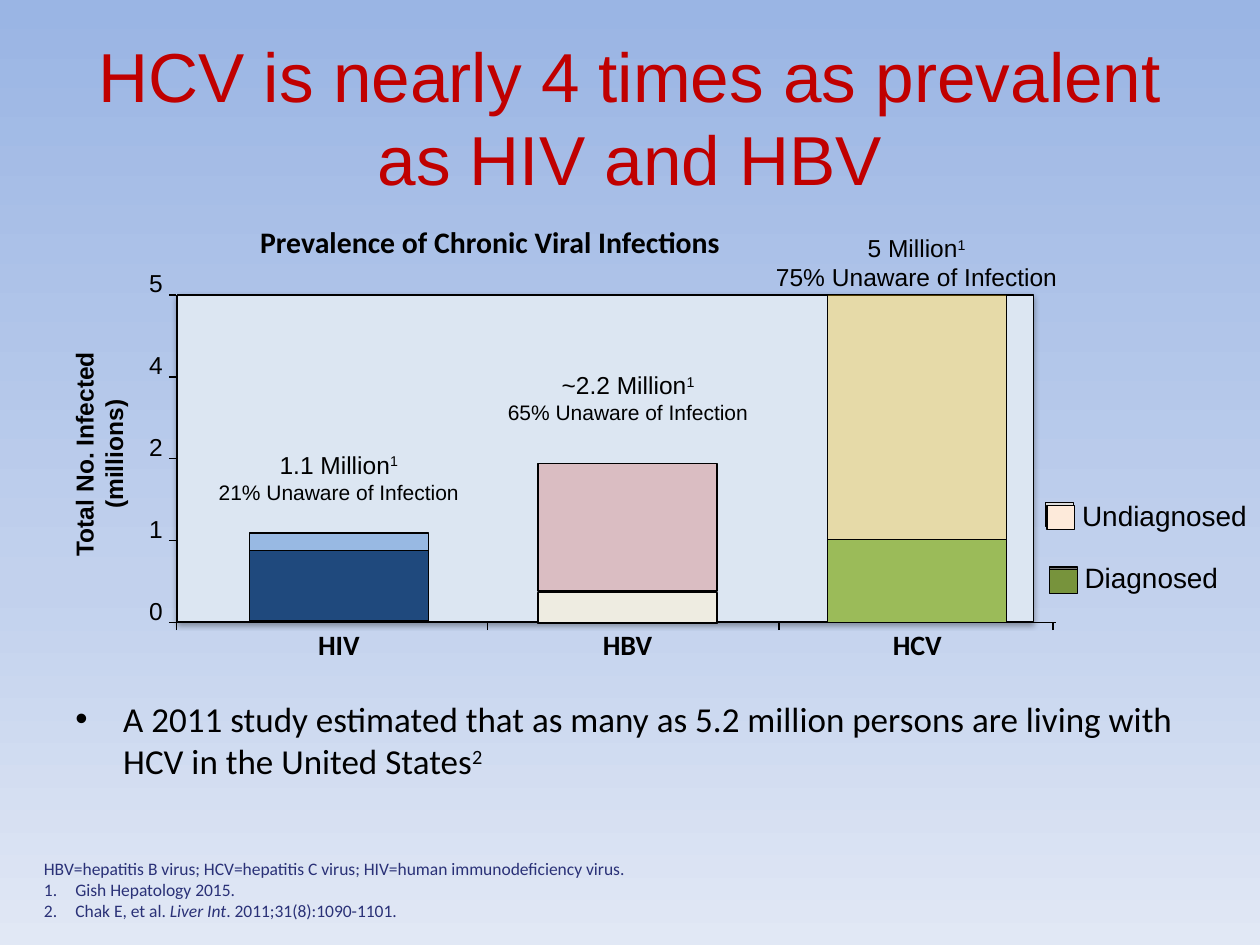
from lxml.etree import SubElement
from pptx import Presentation
from pptx.dml.color import RGBColor
from pptx.enum.shapes import MSO_CONNECTOR, MSO_SHAPE
from pptx.enum.text import MSO_ANCHOR, MSO_AUTO_SIZE, PP_ALIGN
from pptx.oxml import parse_xml
from pptx.oxml.ns import nsdecls, qn
from pptx.util import Inches, Pt

THEME = {
    "head": "Arial", "body": "Calibri",
    "ink": "000000", "title": "C00000", "note": "2A3177", "panel": "DCE6F2",
    "bg": [(0, "9AB5E4"), (62, "C2D1ED"), (100, "E1E8F5")],
    "title_pt": 39.6, "bullet_pt": 20, "chart_pt": 17, "label_pt": 16,
    "value_pt": 14, "detail_pt": 12, "note_pt": 10,
    "edge": 0.75, "axis": 1,
}
SUP = {"base": 30}
TITLE = "HCV is nearly 4 times as prevalent as HIV and HBV"
CHART_TITLE = "Prevalence of Chronic Viral Infections"
AXIS_TITLE = "Total No. Infected (millions)"
TICKS = ["5", "4", "2", "1", "0"]
BULLET = [("A 2011 study estimated that as many as 5.2 million persons are living with "
           "HCV in the United States", {}), ("2", SUP)]
NOTES = [
    [("HBV=hepatitis B virus; HCV=hepatitis C virus; HIV=human immunodeficiency virus.", {})],
    [("Gish Hepatology 2015.", {})],
    [("Chak E, et al. ", {}), ("Liver Int", {"italic": True}), (". 2011;31(8):1090-1101.", {})],
]
BARS = [
    ("HIV", 1.98, [(4.23, 0.15, "558ED5", 50), (4.37, 0.56, "1F497D", 100)]),
    ("HBV", 4.27, [(4.7, 0.25, "EEECE1", 100), (3.68, 1.01, "D99694", 50)]),
    ("HCV", 6.57, [(4.28, 0.66, "9BBB59", 100), (2.34, 1.94, "FFC000", 30)]),
]
VALUES = [
    ("5 Million", "75% Unaware of Infection", (5.37, 1.8, 3.81, 0.57), "value_pt"),
    ("1.1 Million", "21% Unaware of Infection", (1.46, 3.52, 2.46, 0.54), "detail_pt"),
    ("~2.2 Million", "65% Unaware of Infection", (3.57, 2.89, 2.83, 0.54), "detail_pt"),
]
LEGEND = [
    ("Diagnosed", (8.51, 4.4, 1.26, 0.37), [(8.33, 4.5, "777777"), (8.33, 4.52, "77933C")]),
    ("Undiagnosed", (8.49, 3.91, 1.54, 0.37), [(8.3, 3.99, "DDDDDD"), (8.31, 4.01, "FDEADA")]),
]
LEFT, TOP, BASE, RIGHT = 1.4, 2.34, 4.94, 8.38
BAR_W, TICK = 1.42, 0.06
CATEGORY_TICKS = [LEFT, 3.87, 6.18, 8.36]


def rgb(color):
    return RGBColor.from_string(color)


def add_text(s, text, at, size, font="head", color="ink", bold=False, align=PP_ALIGN.LEFT,
             anchor=MSO_ANCHOR.TOP, rotation=0, tight=False, bullets=None, indent=0.25):
    sp = s.shapes.add_textbox(*map(Inches, at))
    sp.rotation = rotation
    tf = sp.text_frame
    tf.word_wrap = not tight
    tf.auto_size = MSO_AUTO_SIZE.NONE
    tf.vertical_anchor = anchor
    if tight:
        tf.margin_left = tf.margin_right = tf.margin_top = tf.margin_bottom = 0
    paragraphs = [[(text, {})]] if isinstance(text, str) else text
    for i, runs in enumerate(paragraphs):
        p = tf.paragraphs[0] if i == 0 else tf.add_paragraph()
        p.alignment = align
        if bullets and bullets[i]:
            tag, attrs = bullets[i]
            pPr = p._p.get_or_add_pPr()
            pPr.set("marL", str(Inches(indent)))
            pPr.set("indent", str(-Inches(indent)))
            if tag == "a:buChar":
                SubElement(pPr, qn("a:buFont"), typeface=THEME["head"])
            SubElement(pPr, qn(tag), **attrs)
        for words, style in runs:
            if words == "\n":
                p.add_line_break()
                continue
            r = p.add_run()
            r.text = words
            r.font.name = THEME[font]
            r.font.size = Pt(THEME[style.get("size", size)])
            r.font.bold = bold
            r.font.italic = style.get("italic", False)
            r.font.color.rgb = rgb(THEME[color])
            if "base" in style:
                r._r.get_or_add_rPr().set("baseline", str(style["base"] * 1000))
    return sp


def add_rect(s, at, fill, opacity=100):
    sp = s.shapes.add_shape(MSO_SHAPE.RECTANGLE, *map(Inches, at))
    sp.shadow.inherit = False
    sp.fill.solid()
    sp.fill.fore_color.rgb = rgb(fill)
    if opacity < 100:
        color = sp._element.spPr.find(qn("a:solidFill"))[0]
        SubElement(color, qn("a:alpha"), val=str(opacity * 1000))
    sp.line.color.rgb = rgb(THEME["ink"])
    sp.line.width = Pt(THEME["edge"])
    return sp


def add_line(s, x1, y1, x2, y2):
    line = s.shapes.add_connector(MSO_CONNECTOR.STRAIGHT, *map(Inches, (x1, y1, x2, y2)))
    line.line.color.rgb = rgb(THEME["ink"])
    line.line.width = Pt(THEME["axis"])
    SubElement(line._element.spPr, qn("a:effectLst"))


def set_background(s):
    stops = "".join(f'<a:gs pos="{pos * 1000}"><a:srgbClr val="{c}"/></a:gs>'
                    for pos, c in THEME["bg"])
    s.background.fill.solid()
    bgPr = s._element.cSld.find(qn("p:bg"))[0]
    bgPr.replace(bgPr[0], parse_xml(
        f'<a:gradFill {nsdecls("a")} rotWithShape="1"><a:gsLst>{stops}</a:gsLst>'
        '<a:lin ang="5400000" scaled="0"/></a:gradFill>'))


def add_panel(s):
    panel = add_rect(s, (1.41, TOP, 6.79, 2.59), THEME["panel"])
    effects = panel._element.spPr.find(qn("a:effectLst"))
    shadow = SubElement(effects, qn("a:outerShdw"), blurRad=str(Pt(3.1)), dist=str(Pt(1.8)),
                        dir="5400000", rotWithShape="0")
    color = SubElement(shadow, qn("a:srgbClr"), val=THEME["ink"])
    SubElement(color, qn("a:alpha"), val="35000")


def add_axes(s):
    add_line(s, LEFT, TOP, LEFT, BASE)
    add_line(s, LEFT, BASE, RIGHT, BASE)
    step = (BASE - TOP) / (len(TICKS) - 1)
    for i, label in enumerate(TICKS):
        y = TOP + i * step
        add_line(s, LEFT - TICK, y, LEFT, y)
        add_text(s, label, (0.99, y - 0.26, 0.4, 0.34), "value_pt", align=PP_ALIGN.RIGHT)
    for x in CATEGORY_TICKS:
        add_line(s, x, BASE + TICK, x, BASE)


def main():
    prs = Presentation()
    prs.slide_width, prs.slide_height = Inches(10), Inches(7.5)
    s = prs.slides.add_slide(prs.slide_layouts[6])
    center = PP_ALIGN.CENTER
    set_background(s)
    add_text(s, TITLE, (0.5, 0.3, 9, 1.25), "title_pt", color="title", align=center,
             anchor=MSO_ANCHOR.MIDDLE)
    number = ("a:buAutoNum", {"type": "arabicPeriod"})
    add_text(s, NOTES, (0.25, 6.75, 8.42, 0.61), "note_pt", font="body", color="note",
             anchor=MSO_ANCHOR.BOTTOM, bullets=[None, number, number])
    add_text(s, [BULLET], (0.5, 5.49, 9, 1.25), "bullet_pt", font="body",
             bullets=[("a:buChar", {"char": "•"})], indent=0.38)
    add_panel(s)
    for name, x, parts in BARS:
        for y, h, fill, opacity in parts:
            add_rect(s, (x, y, BAR_W, h), fill, opacity)
        add_text(s, name, (x + BAR_W / 2 - 0.2, 4.98, 0.4, 0.27), "label_pt", font="body",
                 bold=True, align=center, tight=True)
    add_axes(s)
    add_text(s, AXIS_TITLE, (-0.57, 3.32, 2.71, 0.57), "value_pt", bold=True, align=center,
             rotation=270)
    for value, detail, at, size in VALUES:
        runs = [(value, {}), ("1", SUP), ("\n", {}), (detail, {"size": size})]
        add_text(s, [runs], at, "value_pt", align=center)
    for name, at, swatches in LEGEND:
        add_text(s, name, at, "label_pt")
        for x, y, fill in swatches:
            add_rect(s, (x, y, 0.22, 0.19), fill)
    add_text(s, CHART_TITLE, (1.05, 1.73, 5.68, 0.39), "chart_pt", font="body", bold=True,
             align=center)
    prs.save("out.pptx")


if __name__ == "__main__":
    main()
